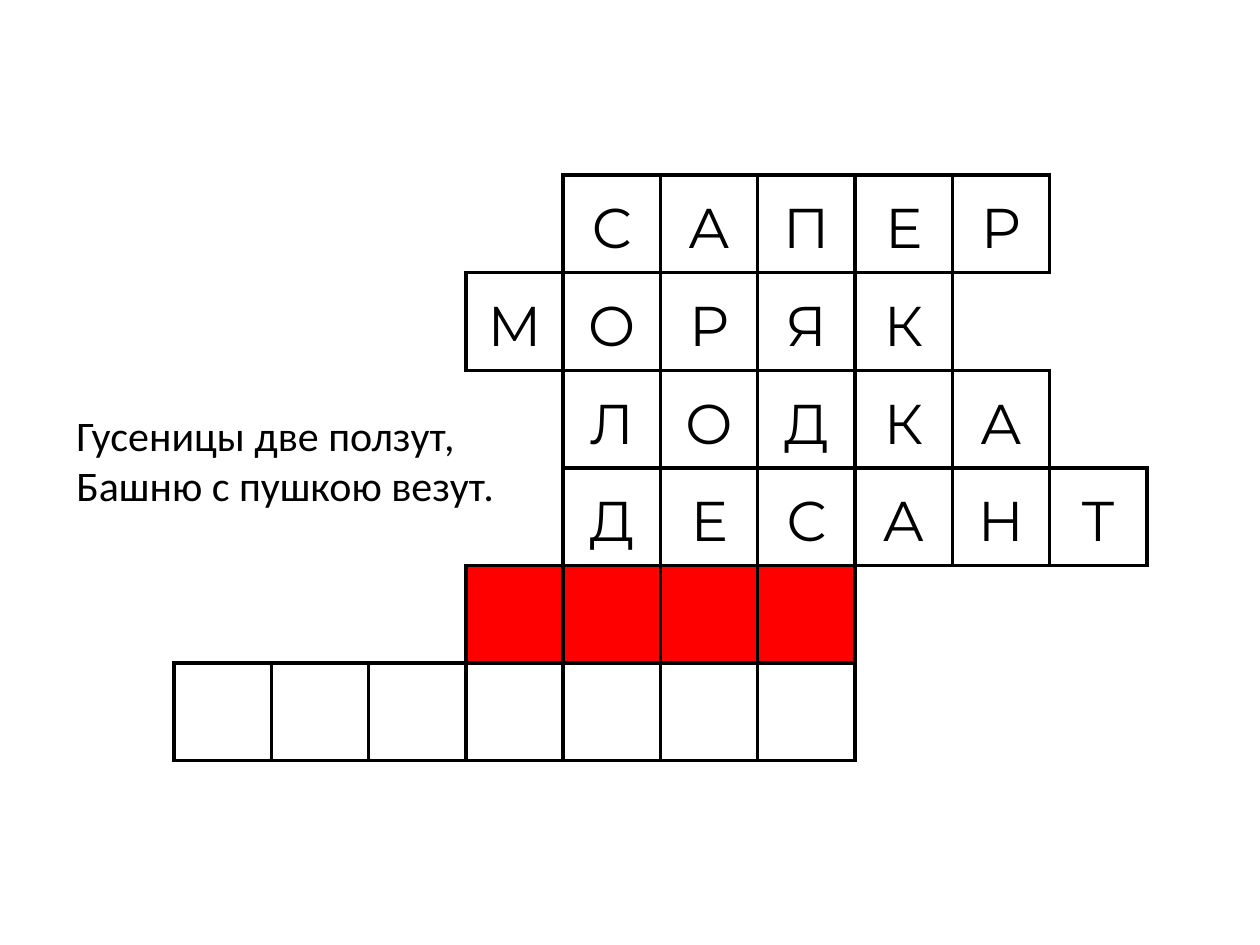
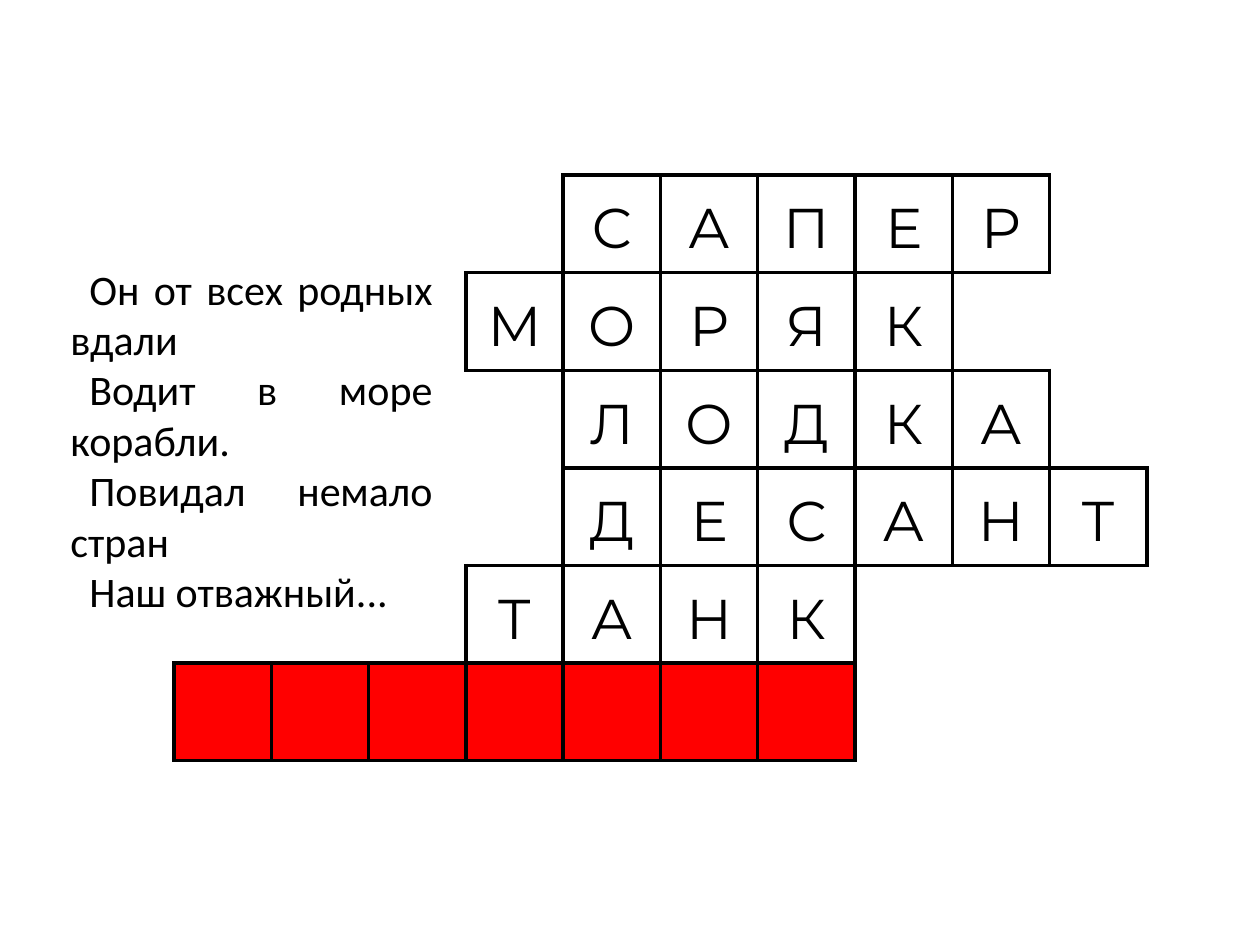
from lxml import etree
from pptx import Presentation
from pptx.dml.color import RGBColor
from pptx.enum.text import MSO_ANCHOR, MSO_AUTO_SIZE, PP_ALIGN
from pptx.oxml.ns import qn
from pptx.util import Pt

# Content: first column, number of letters, word
ANSWERS = [
    (4, 5, "САПЕР"),
    (3, 5, "МОРЯК"),
    (4, 5, "ЛОДКА"),
    (4, 6, "ДЕСАНТ"),
    (3, 4, "ТАНК"),
    (0, 7, ""),
]
TOP, MIDDLE = MSO_ANCHOR.TOP, MSO_ANCHOR.MIDDLE
LEFT, CENTER, JUSTIFY = PP_ALIGN.LEFT, PP_ALIGN.CENTER, PP_ALIGN.JUSTIFY
FIT_SHAPE = MSO_AUTO_SIZE.SHAPE_TO_FIT_TEXT

# "asked" is the row whose riddle is shown; rows above it are solved
RIDDLES = [
    {"asked": 4, "box": (64, 403, 466, 115), "anchor": TOP, "align": LEFT, "indent": 0,
     "verses": ["Гусеницы две ползут,\nБашню с пушкою везут."]},
    {"asked": 5, "box": (58, 255, 387, 369), "anchor": MIDDLE, "align": JUSTIFY, "indent": 19,
     "verses": ["Он от всех родных вдали", "Водит в море корабли.",
                "Повидал немало стран", "Наш отважный..."]},
]

# Shared look
BLACK, RED = "000000", "FF0000"
RIDDLE_FONT, LETTER_FONT = "Calibri", "Montserrat"
GRID_BOX = (174, 175, 973, 586)
COLUMNS = 10
BORDER = Pt(2.25)
NO_STYLE_NO_GRID = "{2D5ABB26-0587-4C30-8999-92F81FD0307C}"
SIDES = {"a:lnL": (0, -1), "a:lnR": (0, 1), "a:lnT": (-1, 0), "a:lnB": (1, 0)}
EMU_PER_PX = 914400 / 126


def px(length):
    return round(length * EMU_PER_PX)


def color(hex_code):
    return RGBColor.from_string(hex_code)


def style(paragraph, font_name, size, align):
    paragraph.alignment = align
    for run in paragraph.runs:
        run.font.name = font_name
        run.font.size = Pt(size)
        run.font.color.rgb = color(BLACK)


def in_word(row, column):
    if not 0 <= row < len(ANSWERS):
        return False
    first, length, _ = ANSWERS[row]
    return first <= column < first + length


def set_borders(cell, row, column):
    """Draw each side that touches a letter square, here or next door."""
    properties = cell._tc.get_or_add_tcPr()
    for tag, (down, right) in SIDES.items():
        line = etree.SubElement(properties, qn(tag), w=str(BORDER))
        if in_word(row, column) or in_word(row + down, column + right):
            fill = etree.SubElement(line, qn("a:solidFill"))
            etree.SubElement(fill, qn("a:srgbClr"), val=BLACK)
        else:
            etree.SubElement(line, qn("a:noFill"))


def fill_square(cell, row, column, asked):
    set_borders(cell, row, column)
    if row == asked and in_word(row, column):
        cell.fill.solid()
        cell.fill.fore_color.rgb = color(RED)
    else:
        cell.fill.background()
    if row < asked and in_word(row, column):
        first, _, word = ANSWERS[row]
        cell.vertical_anchor = MIDDLE
        cell.margin_left = cell.margin_right = px(9)
        cell.margin_top = cell.margin_bottom = 0
        letter = cell.text_frame.paragraphs[0]
        letter.text = word[column - first]
        letter.line_spacing = 1.15
        style(letter, LETTER_FONT, 32, CENTER)


def add_crossword(slide, asked):
    left, top, width, height = map(px, GRID_BOX)
    grid = slide.shapes.add_table(len(ANSWERS), COLUMNS, left, top, width, height).table
    grid.first_row = grid.horz_banding = False
    grid._tbl.tblPr.find(qn("a:tableStyleId")).text = NO_STYLE_NO_GRID
    for row in range(len(ANSWERS)):
        for column in range(COLUMNS):
            fill_square(grid.cell(row, column), row, column, asked)


def add_riddle(slide, riddle):
    frame = slide.shapes.add_textbox(*map(px, riddle["box"])).text_frame
    frame.word_wrap = True
    frame.auto_size = FIT_SHAPE
    frame.vertical_anchor = riddle["anchor"]
    for number, verse in enumerate(riddle["verses"]):
        paragraph = frame.add_paragraph() if number else frame.paragraphs[0]
        paragraph.text = verse
        if riddle["indent"]:
            paragraph._p.get_or_add_pPr().set("indent", str(px(riddle["indent"])))
        style(paragraph, RIDDLE_FONT, 24, riddle["align"])


def main():
    deck = Presentation()
    deck.slide_width, deck.slide_height = px(1260), px(945)
    blank = deck.slide_layouts[6]
    for riddle in RIDDLES:
        slide = deck.slides.add_slide(blank)
        add_crossword(slide, riddle["asked"])
        add_riddle(slide, riddle)
    deck.save("out.pptx")


if __name__ == "__main__":
    main()
